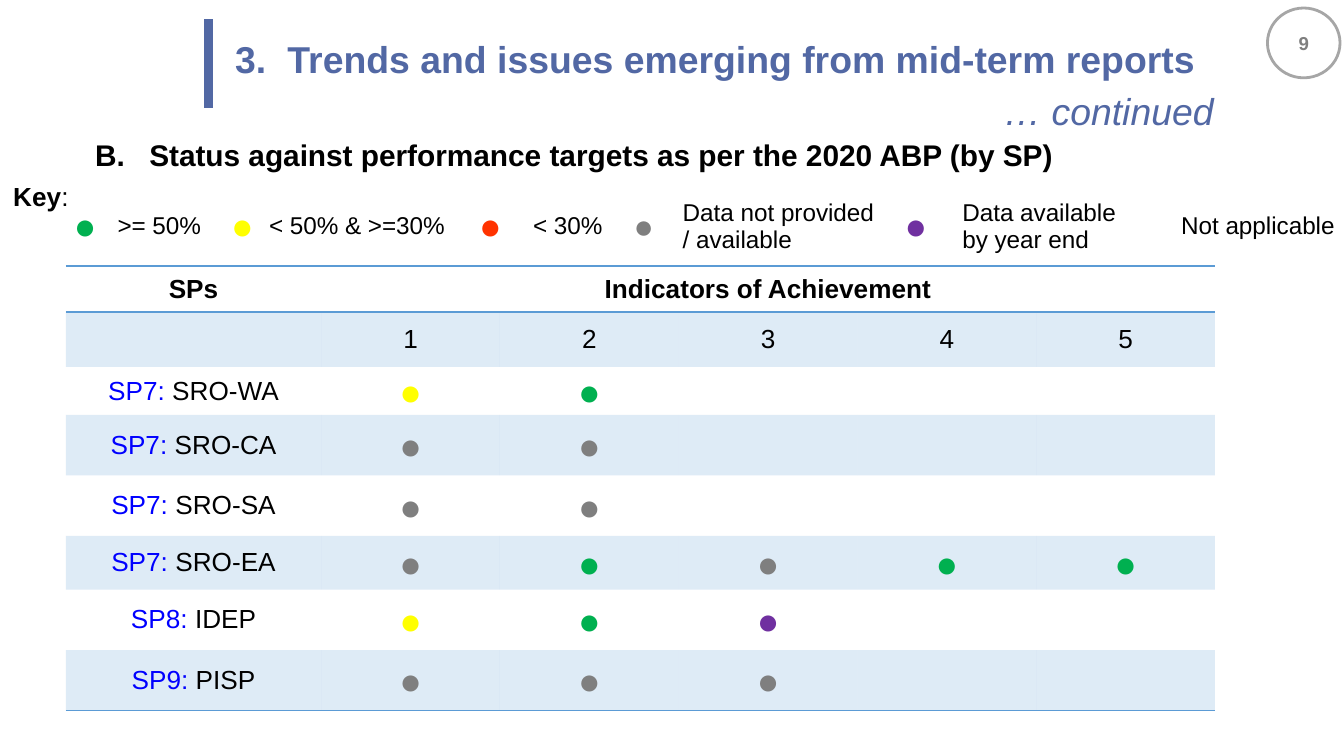
"""Build the slide on mid-term report trends: status against the 2020 ABP targets."""
from dataclasses import dataclass

from lxml.etree import SubElement
from pptx import Presentation
from pptx.dml.color import RGBColor as Color
from pptx.enum.shapes import MSO_CONNECTOR as Connector, MSO_SHAPE as Shape
from pptx.enum.text import MSO_ANCHOR as Anchor, MSO_AUTO_SIZE as AutoSize, PP_ALIGN as Align
from pptx.oxml import parse_xml
from pptx.oxml.ns import nsdecls, qn
from pptx.util import Pt


@dataclass(frozen=True)
class Theme:
    font: str = "Arial"
    heading: str = "5268A4"
    text: str = "000000"
    unit: str = "0000FF"
    table: str = "5B9BD5"
    paper: str = "FFFFFF"
    ring: str = "A6A6A6"
    green: str = "00B050"
    yellow: str = "FFFF00"
    red: str = "FF3300"
    grey: str = "7F7F7F"
    purple: str = "7030A0"
    title_size: int = 20
    subtitle_size: int = 16
    body_size: int = 14
    key_size: int = 13
    number_size: int = 10
    dot_size: int = 20
    small_dot_size: int = 18


theme = Theme()
rgb = Color.from_string


def write(frame, spans, size, align=Align.LEFT, bold=False, anchor=Anchor.MIDDLE):
    """Write one paragraph of (text, colour) spans and return it."""
    frame.vertical_anchor = anchor
    para = frame.paragraphs[0]
    para.alignment = align
    para.font.name = theme.font
    para.font.size = Pt(size)
    para.font.bold = bold
    for text, colour in spans:
        span = para.add_run()
        span.text = text
        span.font.color.rgb = rgb(colour)
    return para


def add_plain_table(page, left, top, widths, heights):
    """Add a table with no style, no fills and no vertical cell margins."""
    frame = page.shapes.add_table(len(heights), len(widths), Pt(left), Pt(top),
                                  Pt(sum(widths)), Pt(sum(heights)))
    table = frame.table
    table.first_row = table.horz_banding = False
    style = table._tbl.tblPr.find(qn("a:tableStyleId"))
    style.text = "{2D5ABB26-0587-4C30-8999-92F81FD0307C}"
    for column, width in zip(table.columns, widths):
        column.width = Pt(width)
    for row, height in zip(table.rows, heights):
        row.height = Pt(height)
    for cell in table.iter_cells():
        cell.fill.background()
        cell.margin_left = cell.margin_right = Pt(7.2)
        cell.margin_top = cell.margin_bottom = 0
        cell.vertical_anchor = Anchor.MIDDLE
    return table


deck = Presentation()
deck.slide_width, deck.slide_height = Pt(720), Pt(405)
page = deck.slides.add_slide(deck.slide_layouts[5])

badge = page.shapes.add_shape(Shape.OVAL, Pt(679), Pt(4.3), Pt(38.9), Pt(37.4))
badge.shadow.inherit = False
badge.fill.solid()
badge.fill.fore_color.rgb = rgb(theme.paper)
badge.line.color.rgb = rgb(theme.ring)
badge.line.width = Pt(1.5)
write(badge.text_frame, [("9", theme.grey)], theme.number_size, Align.CENTER, True)

title = page.shapes.title
title.left, title.top, title.width, title.height = Pt(124.6), Pt(14.4), Pt(555), Pt(38.9)
continued = page.shapes.add_textbox(Pt(157.7), Pt(46.1), Pt(494), Pt(31))
for box, text, align, bold in (
    (title, "3.\tTrends and issues emerging from mid-term reports", Align.LEFT, True),
    (continued, "… continued", Align.RIGHT, False),
):
    frame = box.text_frame
    frame.word_wrap = True
    frame.auto_size = AutoSize.NONE
    frame.margin_left = frame.margin_right = frame.margin_top = frame.margin_bottom = Pt(1.4)
    para = write(frame, [(text, theme.heading)], theme.title_size, align, bold)
    para.line_spacing = 0.8
    para.font.italic = not bold

bar = page.shapes.add_connector(Connector.STRAIGHT, Pt(111.6), Pt(57.6), Pt(111.6), Pt(10.1))
bar.line.color.rgb = rgb(theme.heading)
bar.line.width = Pt(5)
SubElement(bar._element.spPr, qn("a:effectLst"))

subtitle = page.shapes.add_textbox(Pt(7.9), Pt(69.8), Pt(643.7), Pt(26.6))
subtitle.text_frame.word_wrap = True
write(subtitle.text_frame,
      [("B.\tStatus against performance targets as per the 2020 ABP (by SP)", theme.text)],
      theme.subtitle_size, bold=True, anchor=Anchor.TOP)

for box, margin, hanging in ((title, 28, 28), (subtitle, 65, 29)):
    properties = box.text_frame.paragraphs[0]._p.get_or_add_pPr()
    properties.set("marL", str(Pt(margin)))
    properties.set("indent", str(-Pt(hanging)))

key_label = page.shapes.add_textbox(0, Pt(92.9), Pt(48.2), Pt(24.5))
key_label.text_frame.word_wrap = False
para = write(key_label.text_frame, [("Key", theme.text), (":", theme.text)],
             theme.body_size, anchor=Anchor.TOP)
para.runs[0].font.bold = True

indicators = add_plain_table(page, 35.3, 142.6, [136.8] + [95.76] * 5,
                             [24.5, 29.5, 25.2, 32.4, 32.4, 28.8, 32.4, 32.4])
indicators.cell(0, 1).merge(indicators.cell(0, 5))
for column, text in ((0, "SPs"), (1, "Indicators of Achievement")):
    write(indicators.cell(0, column).text_frame, [(text, theme.text)],
          theme.body_size, Align.CENTER, True)
for column in range(1, 6):
    write(indicators.cell(1, column).text_frame, [(str(column), theme.text)],
          theme.body_size, Align.CENTER)

green, yellow, grey, purple = theme.green, theme.yellow, theme.grey, theme.purple
statuses = [
    ("SP7: ", "SRO-WA", [yellow, green]),
    ("SP7: ", "SRO-CA", [grey, grey]),
    ("SP7: ", "SRO-SA", [grey, grey]),
    ("SP7: ", "SRO-EA", [grey, green, grey, green, green]),
    ("SP8: ", "IDEP", [yellow, green, purple]),
    ("SP9: ", "PISP", [grey, grey, grey]),
]
for row, (unit, office, dots) in enumerate(statuses, 2):
    write(indicators.cell(row, 0).text_frame, [(unit, theme.unit), (office, theme.text)],
          theme.body_size, Align.CENTER)
    for column, colour in enumerate(dots, 1):
        para = write(indicators.cell(row, column).text_frame, [("●", colour)],
                     theme.dot_size, Align.CENTER)
        para.line_spacing = 1.07

for row in range(1, 8, 2):
    for cell in indicators.rows[row].cells:
        cell.fill.solid()
        cell.fill.fore_color.rgb = rgb(theme.table)
        tint = cell._tc.tcPr.find(qn("a:solidFill"))[0]
        SubElement(tint, qn("a:alpha"), val="20000")

for row, sides in ((0, ("lnB", "lnT")), (7, ("lnB",))):
    for cell in indicators.rows[row].cells:
        for side in sides:
            cell._tc.tcPr.insert(0, parse_xml(
                f'<a:{side} {nsdecls("a")} w="{Pt(1)}"><a:solidFill>'
                f'<a:srgbClr val="{theme.table}"/></a:solidFill></a:{side}>'))

key = add_plain_table(page, 32.4, 102.2, [21.6, 62.6, 17.3, 114.5, 28.8, 54, 27.4,
                                          118.8, 31, 100, 16.6, 95], [38.2])
key.cell(0, 11).margin_right = 0
entries = [
    (green, theme.dot_size, ">= 50%", Align.CENTER, Align.CENTER),
    (yellow, theme.dot_size, "< 50% & >=30%", Align.CENTER, Align.CENTER),
    (theme.red, theme.dot_size, "< 30%", Align.CENTER, Align.CENTER),
    (grey, theme.small_dot_size, "Data not provided / available", Align.CENTER, Align.LEFT),
    (purple, theme.dot_size, "Data available by year end", Align.LEFT, Align.LEFT),
    (None, theme.dot_size, "Not applicable", Align.LEFT, Align.LEFT),
]
for index, (colour, size, label, dot_align, label_align) in enumerate(entries):
    if colour:
        write(key.cell(0, 2 * index).text_frame, [("●", colour)], size, dot_align)
    write(key.cell(0, 2 * index + 1).text_frame, [(label, theme.text)],
          theme.key_size, label_align)

deck.save("out.pptx")
